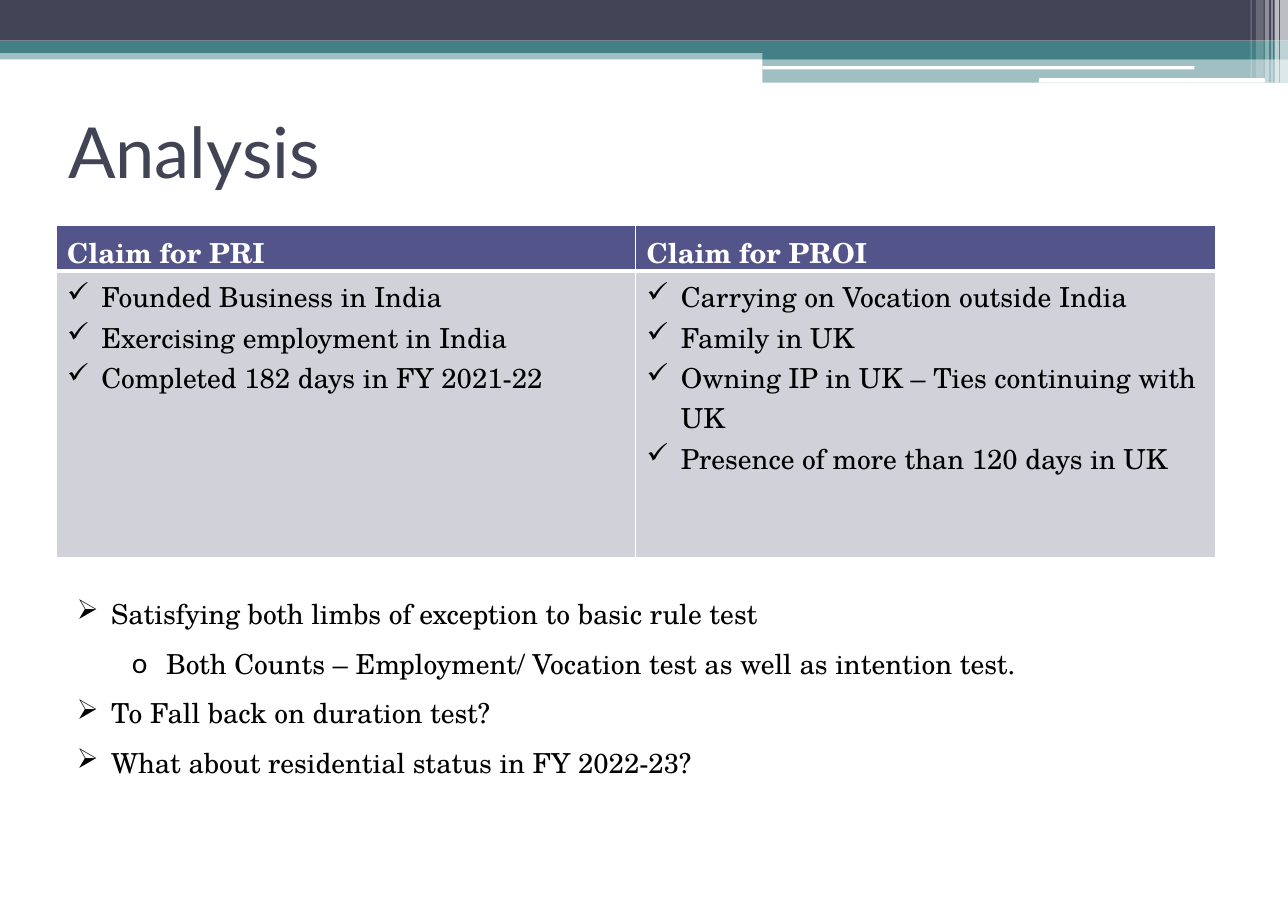
import pptx
import pptx.util
import pptx.dml.color
import pptx.enum.shapes
import pptx.enum.text
import pptx.oxml.ns
import lxml.etree

COLUMNS, ROWS = 1169, 827
WIDTH, HEIGHT = pptx.util.Inches(11.69), pptx.util.Inches(8.27)
NAVY, TEAL, WHITE, BLACK = "424456", "438086", "FFFFFF", "000000"
HEADER_FILL, BODY_FILL = "53548A", "D1D1DA"
BODY_FONT = "TeX Gyre Schola"

BANDS = [
    ("RECTANGLE", (0, 44, 1169, 10), TEAL, 50),
    ("RECTANGLE", (0, 0, 1169, 37), NAVY, 100),
    ("RECTANGLE", (0, 37, 1169, 11), TEAL, 100),
    ("RECTANGLE", (692, 43, 477, 11), TEAL, 100),
    ("RECTANGLE", (692, 53, 477, 22), TEAL, 50),
    ("ROUNDED_RECTANGLE", (692, 60, 392, 3), WHITE, 100),
    ("ROUNDED_RECTANGLE", (943, 71, 205, 4), WHITE, 100),
]
STRIPES = [(1162, 7, 75, 65), (1157, 4, 75, 65), (1154, 1, 75, 60),
           (1148, 4, 75, 40), (1140, 7, 71, 20), (1135, 1, 71, 30)]
BANDS += [("RECTANGLE", (left, 0, width, height), WHITE, opacity)
          for left, width, height, opacity in STRIPES]

TITLE = "Analysis"
CLAIMS = {
    "Claim for PRI": [
        "Founded Business in India",
        "Exercising employment in India",
        "Completed 182 days in FY 2021-22",
    ],
    "Claim for PROI": [
        "Carrying on Vocation outside India",
        "Family in UK",
        "Owning IP in UK – Ties continuing with UK",
        "Presence of more than 120 days in UK",
    ],
}
QUESTIONS = [
    (0, "Satisfying both limbs of exception to basic rule test"),
    (1, "Both Counts – Employment/ Vocation test as well as intention test."),
    (0, "To Fall back on duration test?"),
    (0, "What about residential status in FY 2022-23?"),
]
QUESTION_BULLETS = [("➢", None), ("o", "Lato")]
ROW_HEIGHTS = [41, 260]
TITLE_FORMAT = {"name": "Lato", "size": pptx.util.Pt(46), "bold": False}
BODY_FORMAT = {"name": BODY_FONT, "size": pptx.util.Pt(18), "bold": False}
HEADER_FORMAT = {**BODY_FORMAT, "bold": True}


def color(hex_string):
    return pptx.dml.color.RGBColor.from_string(hex_string)


def across(columns):
    return round(WIDTH * columns / COLUMNS)


def down(rows):
    return round(HEIGHT * rows / ROWS)


def place(left, top, width, height):
    return across(left), down(top), across(width), down(height)


def add_element(parent, tag, **attributes):
    return lxml.etree.SubElement(parent, pptx.oxml.ns.qn(tag), attributes)


def fill_solid(target, hex_string):
    target.fill.solid()
    target.fill.fore_color.rgb = color(hex_string)


def add_band(slide, preset, box, hex_string, opacity):
    shape = slide.shapes.add_shape(
        getattr(pptx.enum.shapes.MSO_SHAPE, preset), *place(*box))
    shape.shadow.inherit = False
    shape.line.fill.background()
    fill_solid(shape, hex_string)
    if opacity < 100:
        fill_color = shape.fill._xPr.find(".//" + pptx.oxml.ns.qn("a:srgbClr"))
        add_element(fill_color, "a:alpha", val=str(opacity * 1000))


def add_text_box(slide, box):
    frame = slide.shapes.add_textbox(*place(*box)).text_frame
    frame.word_wrap = True
    return frame


def write(paragraph, text, font_format, hex_string):
    run = paragraph.add_run()
    run.text = text
    for name, value in font_format.items():
        setattr(run.font, name, value)
    run.font.color.rgb = color(hex_string)


def set_bullet(paragraph, character, level=0, font=None):
    properties = paragraph._p.get_or_add_pPr()
    properties.set("marL", str(across(31 + 50 * level)))
    properties.set("indent", str(-across(31)))
    if font:
        add_element(properties, "a:buFont", typeface=font)
    add_element(properties, "a:buChar", char=character)


def write_list(frame, items, bullets, spacing):
    for index, (level, text) in enumerate(items):
        paragraph = frame.add_paragraph() if index else frame.paragraphs[0]
        paragraph.level = level
        paragraph.line_spacing = spacing
        character, font = bullets[level]
        set_bullet(paragraph, character, level, font)
        write(paragraph, text, BODY_FORMAT, BLACK)


def style_cell(cell, hex_string, top, bottom):
    properties = cell._tc.get_or_add_tcPr()
    for side, points in {"L": 1, "R": 1, "T": top, "B": bottom}.items():
        line = add_element(properties, "a:ln" + side, w=str(pptx.util.Pt(points)))
        line_fill = add_element(line, "a:solidFill")
        add_element(line_fill, "a:srgbClr", val=WHITE)
    fill_solid(cell, hex_string)


def add_claims(slide):
    table = slide.shapes.add_table(
        2, len(CLAIMS), *place(51, 205, 1052, sum(ROW_HEIGHTS))).table
    for row, height in zip(table.rows, ROW_HEIGHTS):
        row.height = down(height)
    for index, (heading, reasons) in enumerate(CLAIMS.items()):
        header, body = table.cell(0, index), table.cell(1, index)
        style_cell(header, HEADER_FILL, 1, 3)
        style_cell(body, BODY_FILL, 3, 1)
        write(header.text_frame.paragraphs[0], heading, HEADER_FORMAT, WHITE)
        write_list(body.text_frame, [(0, reason) for reason in reasons],
                   [("✓", None)], 1.0)


def main():
    presentation = pptx.Presentation()
    presentation.slide_width, presentation.slide_height = WIDTH, HEIGHT
    slide = presentation.slides.add_slide(presentation.slide_layouts[6])
    for band in BANDS:
        add_band(slide, *band)
    title = add_text_box(slide, (51, 72, 1053, 129))
    margins = {"margin_left": across(11), "margin_right": across(11),
               "margin_top": down(6), "margin_bottom": down(6),
               "vertical_anchor": pptx.enum.text.MSO_ANCHOR.MIDDLE}
    for name, value in margins.items():
        setattr(title, name, value)
    write(title.paragraphs[0], TITLE, TITLE_FORMAT, NAVY)
    add_claims(slide)
    questions = add_text_box(slide, (60, 522, 1050, 222))
    write_list(questions, QUESTIONS, QUESTION_BULLETS, 1.5)
    presentation.save("out.pptx")


if __name__ == "__main__":
    main()
